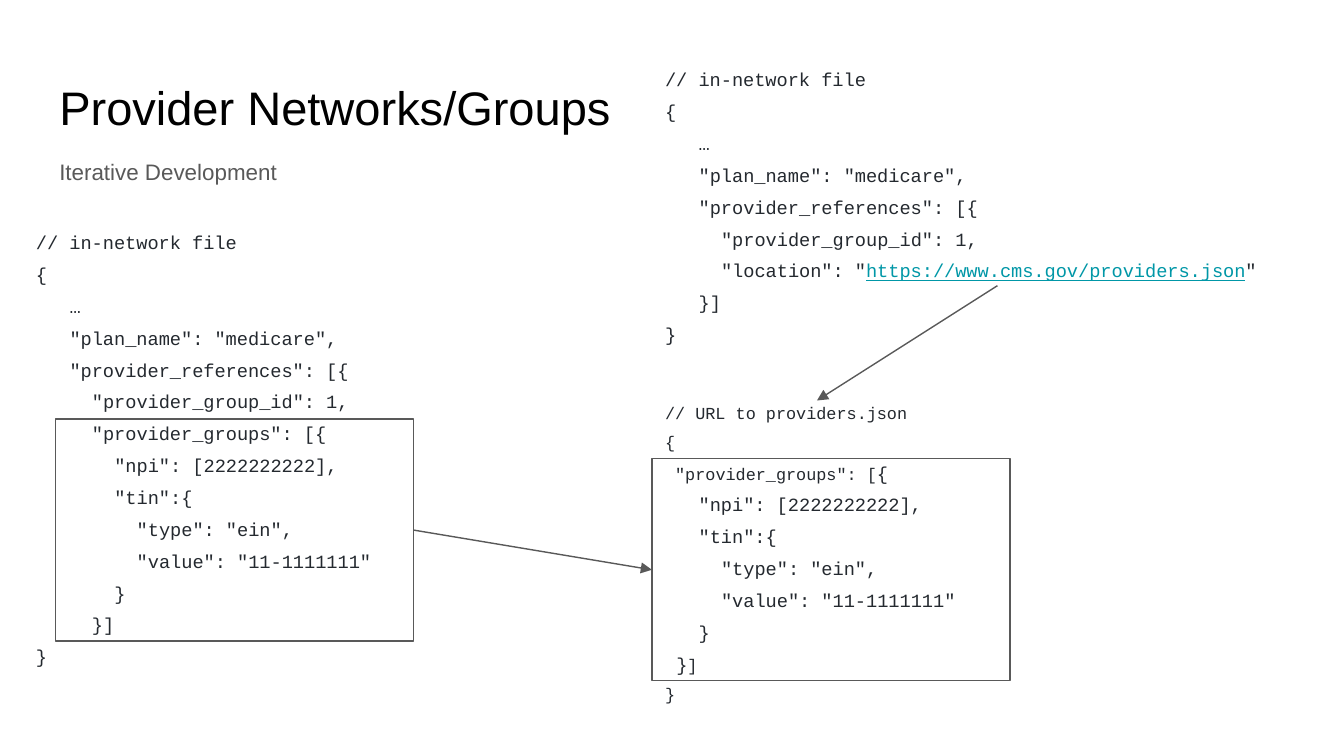
from pptx import Presentation
from pptx.dml.color import RGBColor
from pptx.enum.shapes import MSO_CONNECTOR, MSO_SHAPE
from pptx.enum.text import MSO_ANCHOR, MSO_AUTO_SIZE, PP_ALIGN
from pptx.oxml.ns import qn
from pptx.util import Cm, Pt
from lxml import etree

LINE = MSO_CONNECTOR.STRAIGHT
RECT = MSO_SHAPE.RECTANGLE
TOP = MSO_ANCHOR.TOP
LEFT = PP_ALIGN.LEFT
NO_FIT = MSO_AUTO_SIZE.NONE

BLACK = RGBColor(0x00, 0x00, 0x00)
GRAY = RGBColor(0x59, 0x59, 0x59)
INK = RGBColor(0x24, 0x29, 0x2F)
TEAL = RGBColor(0x00, 0x97, 0xA7)

# Each code line is (depth in characters, runs); a run is text or (text, style)
HEAD = [
    (0, ["// in-network file"]),
    (0, ["{"]),
    (3, ["…"]),
    (3, ['"plan_name": "medicare",']),
    (3, ['"provider_references": [{']),
    (5, ['"provider_group_id": 1,']),
]
END = [(0, ["}"])]
SMALL = {"size": 9}
LINK = {"color": TEAL, "line": True}


def group(depth, style):
    """Lines of the provider group, with the outer brackets in a given style."""
    return [
        (depth, [('"provider_groups": [', style), "{"]),
        (depth + 2, ['"npi": [2222222222],']),
        (depth + 2, ['"tin":{']),
        (depth + 4, ['"type": "ein",']),
        (depth + 4, ['"value": "11-1111111"']),
        (depth + 2, ["}"]),
        (depth, ["}", ("]", style)]),
    ]


class Deck:
    sans = "Arial"
    mono = "Courier New"
    code_size = 10
    code_gap = 1.42
    pad = Cm(0.25)
    width = Pt(0.75)

    def __init__(self):
        self.prs = Presentation()
        self.prs.slide_width, self.prs.slide_height = Cm(25.4), Cm(14.29)
        self.slide = self.prs.slides.add_slide(self.prs.slide_layouts[1])

    def frame(self, shape):
        box = shape.text_frame
        box.word_wrap = True
        box.auto_size = NO_FIT
        box.vertical_anchor = TOP
        box.margin_left = box.margin_right = self.pad
        box.margin_top = box.margin_bottom = self.pad
        return box

    def run(self, par, text, font, size, color, line=None):
        run = par.add_run()
        run.text = text
        run.font.name, run.font.size = font, Pt(size)
        run.font.color.rgb = color
        run.font.underline = line

    def indent(self, par, left):
        props = par._p.get_or_add_pPr()
        props.set("marL", str(int(left)))
        props.set("indent", "0")
        return props

    def holder(self, index, place, text, size, color, gap):
        shape = self.slide.placeholders[index]
        shape.left, shape.top, shape.width, shape.height = map(Cm, place)
        par = self.frame(shape).paragraphs[0]
        par.alignment = LEFT
        par.line_spacing = gap
        par.space_before = Pt(0)
        etree.SubElement(self.indent(par, 0), qn("a:buNone"))
        self.run(par, text, self.sans, size, color)

    def code(self, place, lines):
        box = self.frame(self.slide.shapes.add_textbox(*map(Cm, place)))
        for i, (depth, runs) in enumerate(lines):
            par = box.add_paragraph() if i else box.paragraphs[0]
            par.line_spacing = self.code_gap
            runs = [(r, {}) if isinstance(r, str) else r for r in runs]
            styles = [{"size": self.code_size, "color": INK, **s} for _, s in runs]
            # A Courier character is 0.6 of its size wide
            self.indent(par, Pt(depth * 0.6 * styles[0]["size"]))
            for (text, _), style in zip(runs, styles):
                self.run(par, text, self.mono, **style)

    def rect(self, left, top):
        shape = self.slide.shapes.add_shape(RECT, Cm(left), Cm(top), Cm(6.77), Cm(4.2))
        shape.shadow.inherit = False
        shape.fill.background()
        shape.line.color.rgb = GRAY
        shape.line.width = self.width
        return shape

    def arrow(self, start=(0, 0), end=(0, 0), link=None):
        line = self.slide.shapes.add_connector(LINE, *map(Cm, (*start, *end)))
        if link:
            line.begin_connect(link[0], 3)
            line.end_connect(link[1], 1)
        line.line.color.rgb = GRAY
        line.line.width = self.width
        etree.SubElement(line.line._get_or_add_ln(), qn("a:tailEnd"), type="triangle")
        etree.SubElement(line._element.spPr, qn("a:effectLst"))


def main():
    deck = Deck()

    # Title and subtitle
    deck.holder(0, (0.87, 1.24, 23.67, 1.6), "Provider Networks/Groups", 25.2, BLACK, 1)
    deck.holder(1, (0.87, 2.77, 23.67, 1.09), "Iterative Development", 12, GRAY, 0.95)

    # File with the group inline
    deck.code((0.43, 3.94, 9.96, 9.5), HEAD + group(5, {}) + END)

    # File that points to the group
    place = ['"location": "', ("https://www.cms.gov/providers.json", LINK), '"']
    deck.code((12.32, 0.86, 12.09, 6.43), HEAD + [(5, place), (3, ["}]"])] + END)

    # Linked file
    first = [(0, [("// URL to providers.json", SMALL)]), (0, [("{", SMALL)])]
    last = [(0, [("}", SMALL)])]
    deck.code((12.32, 7.21, 8.92, 6.86), first + group(1, SMALL) + last)

    # Frames around the group, set between code lines, and arrows
    deck.arrow((18.85, 5.4), (15.44, 7.57))
    inner = deck.rect(1.05, 7.92)
    outer = deck.rect(12.32, 8.67)
    deck.arrow(link=(inner, outer))

    deck.prs.save("out.pptx")


if __name__ == "__main__":
    main()
